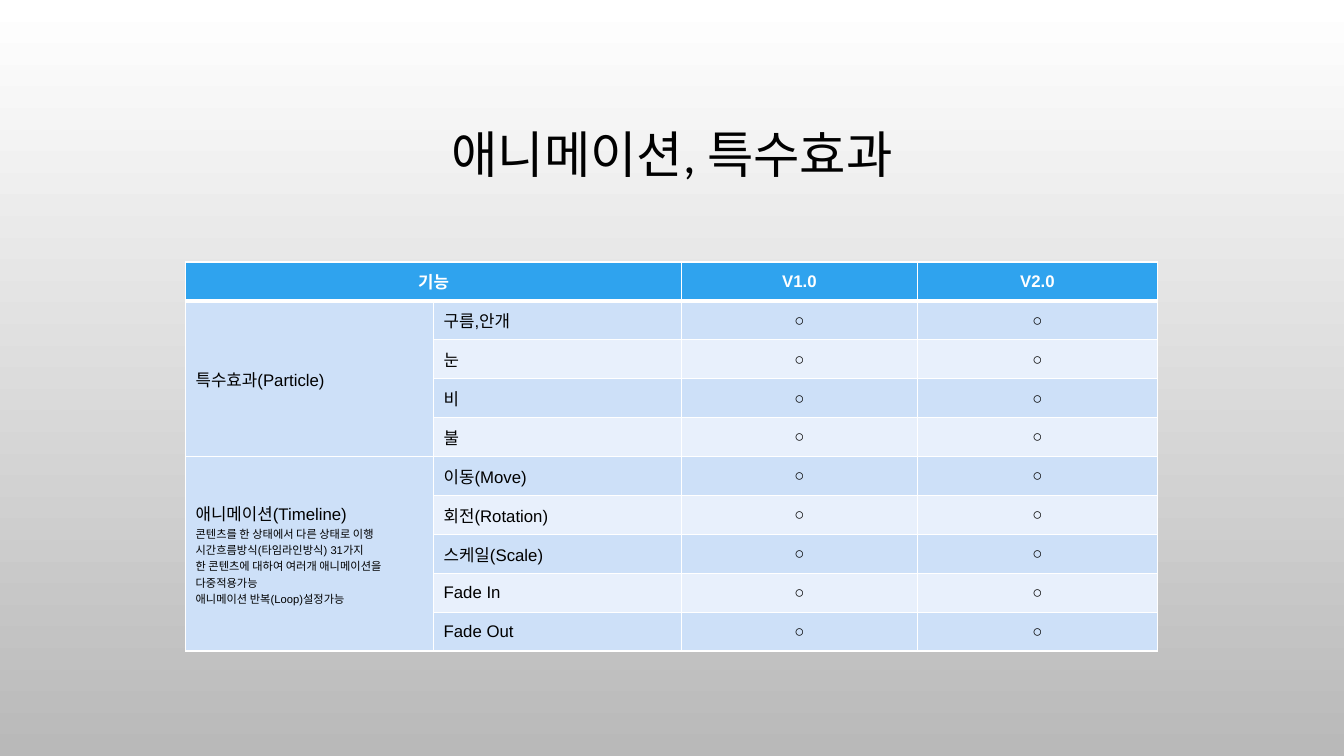
from dataclasses import dataclass

import pptx
import pptx.dml.color
import pptx.enum.text
import pptx.oxml
import pptx.oxml.ns
import pptx.util

Inches = pptx.util.Inches
Pt = pptx.util.Pt
RGBColor = pptx.dml.color.RGBColor
ALIGN = pptx.enum.text.PP_ALIGN
MIDDLE = pptx.enum.text.MSO_ANCHOR.MIDDLE

WHITE = RGBColor(0xFF, 0xFF, 0xFF)
BLACK = RGBColor(0x00, 0x00, 0x00)
GREY = RGBColor(0xB9, 0xB9, 0xB9)
BLUE = RGBColor(0x2F, 0xA3, 0xEE)
BAND_DARK = RGBColor(0xCD, 0xE0, 0xF8)
BAND_LIGHT = RGBColor(0xE8, 0xF0, 0xFC)

COL_WIDTHS = (2.46, 2.46, 2.34, 2.38)
ROW_HEIGHT = 0.386
VERSIONS = ("V1.0", "V2.0")


@dataclass
class Group:
    name: str
    features: tuple[str, ...]
    notes: tuple[str, ...] = ()


GROUPS = (
    Group("특수효과(Particle)", ("구름,안개", "눈", "비", "불")),
    Group(
        "애니메이션(Timeline)",
        ("이동(Move)", "회전(Rotation)", "스케일(Scale)", "Fade In", "Fade Out"),
        (
            "콘텐츠를 한 상태에서 다른 상태로 이행",
            "시간흐름방식(타임라인방식) 31가지",
            "한 콘텐츠에 대하여 여러개 애니메이션을 다중적용가능",
            "애니메이션 반복(Loop)설정가능",
        ),
    ),
)


def add_text(p, text: str, *, size: float = 12, font: str = "Arial",
             color: RGBColor = BLACK, bold: bool = False,
             align: ALIGN = ALIGN.LEFT) -> None:
    p.alignment = align
    r = p.add_run()
    r.text = text
    r.font.size = Pt(size)
    r.font.name = font
    r.font.bold = bold
    r.font.color.rgb = color


def style_cell(cell, row: int) -> None:
    """Set the fill, anchor and white borders of one cell."""
    cell.vertical_anchor = MIDDLE
    cell.fill.solid()
    cell.fill.fore_color.rgb = BLUE if row == 0 else BAND_DARK if row % 2 else BAND_LIGHT
    widths = {"lnL": 1, "lnR": 1, "lnT": 3 if row == 1 else 1, "lnB": 3 if row == 0 else 1}
    tc_pr = cell._tc.get_or_add_tcPr()
    for i, (tag, width) in enumerate(widths.items()):
        ln = pptx.oxml.parse_xml(
            f'<a:{tag} {pptx.oxml.ns.nsdecls("a")} w="{Pt(width)}"><a:solidFill>'
            f'<a:srgbClr val="{WHITE}"/></a:solidFill></a:{tag}>')
        tc_pr.insert(i, ln)


def add_title(slide, text: str) -> None:
    sp = slide.shapes.add_textbox(Inches(1), Inches(0.68), Inches(11.33), Inches(1.75))
    tf = sp.text_frame
    tf.word_wrap = True
    tf.vertical_anchor = MIDDLE
    p = tf.paragraphs[0]
    p.line_spacing = 0.9
    add_text(p, text, size=36, font="Calibri", align=ALIGN.CENTER)


def add_group(table, group: Group, top: int) -> None:
    """Fill the rows of one feature group, starting at row top."""
    cell = table.cell(top, 0)
    cell.merge(table.cell(top + len(group.features) - 1, 0))
    tf = cell.text_frame
    p = tf.paragraphs[0]
    add_text(p, group.name)
    for i, note in enumerate(group.notes):
        if i == 0:
            p.add_line_break()
        else:
            p = tf.add_paragraph()
        add_text(p, note, size=8)
    for row, feature in enumerate(group.features, top):
        add_text(table.cell(row, 1).text_frame.paragraphs[0], feature)
        for col in range(2, len(COL_WIDTHS)):
            add_text(table.cell(row, col).text_frame.paragraphs[0], "○", align=ALIGN.CENTER)


def add_feature_table(slide) -> None:
    rows = 1 + sum(len(g.features) for g in GROUPS)
    table = slide.shapes.add_table(
        rows, len(COL_WIDTHS), Inches(1.84), Inches(2.6),
        Inches(sum(COL_WIDTHS)), Inches(rows * ROW_HEIGHT)).table
    for column, width in zip(table.columns, COL_WIDTHS):
        column.width = Inches(width)
    for i, row in enumerate(table.rows):
        row.height = Inches(ROW_HEIGHT)
        for cell in row.cells:
            style_cell(cell, i)

    # Header row
    table.cell(0, 0).merge(table.cell(0, 1))
    for col, text in zip((0, 2, 3), ("기능", *VERSIONS)):
        add_text(table.cell(0, col).text_frame.paragraphs[0], text,
                 color=WHITE, bold=True, align=ALIGN.CENTER)

    # Feature groups
    top = 1
    for group in GROUPS:
        add_group(table, group, top)
        top += len(group.features)


def main() -> None:
    prs = pptx.Presentation()
    prs.slide_width = Inches(13.33)
    prs.slide_height = Inches(7.5)
    slide = prs.slides.add_slide(prs.slide_layouts[6])

    # Background, white at the top to grey at the bottom
    fill = slide.background.fill
    fill.gradient()
    fill.gradient_angle = 270
    for stop, color in zip(fill.gradient_stops, (WHITE, GREY)):
        stop.color.rgb = color

    add_title(slide, "애니메이션, 특수효과")
    add_feature_table(slide)
    prs.save("out.pptx")


if __name__ == "__main__":
    main()
